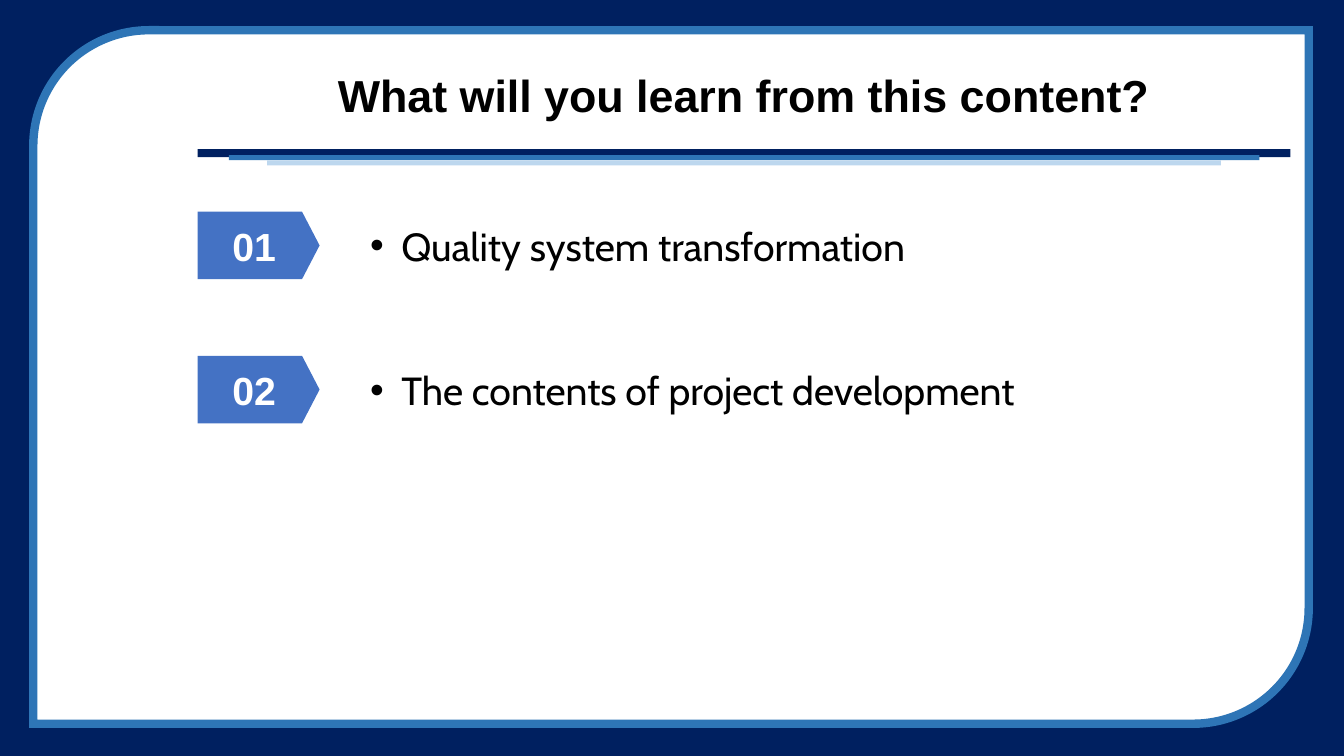
from pptx import Presentation
from pptx.dml.color import RGBColor
from pptx.enum.shapes import MSO_SHAPE
from pptx.enum.text import MSO_ANCHOR, MSO_AUTO_SIZE, PP_ALIGN
from pptx.oxml.ns import qn
from pptx.util import Inches, Pt
from lxml.etree import SubElement

NAVY = RGBColor(0x00, 0x20, 0x60)
BLUE = RGBColor(0x2E, 0x75, 0xB6)
PALE = RGBColor(0xBD, 0xD7, 0xEE)
TAG = RGBColor(0x44, 0x72, 0xC4)
WHITE = RGBColor(0xFF, 0xFF, 0xFF)
BLACK = RGBColor(0x00, 0x00, 0x00)

TITLE = "What will you learn from this content?"
TOPICS = ["Quality system transformation", "The contents of project development"]


def add_block(slide, kind, box, fill):
    """Add a plain filled shape without outline or shadow."""
    shape = slide.shapes.add_shape(kind, *map(Inches, box))
    shape.shadow.inherit = False
    shape.fill.solid()
    shape.fill.fore_color.rgb = fill
    shape.line.fill.background()
    return shape


def place(holder, box):
    """Move a placeholder into the box and in front of the other shapes."""
    holder.left, holder.top, holder.width, holder.height = map(Inches, box)
    holder.element.getparent().append(holder.element)
    holder.text_frame.word_wrap = True
    holder.text_frame.auto_size = MSO_AUTO_SIZE.NONE


def set_text(shape, text, size, face, color, bold, align):
    """Fill a shape with one styled, vertically centred paragraph."""
    frame = shape.text_frame
    frame.text = text
    frame.vertical_anchor = MSO_ANCHOR.MIDDLE
    para = frame.paragraphs[0]
    para.alignment = align
    para.space_before = Pt(0)
    font = para.runs[0].font
    font.size, font.name, font.bold = Pt(size), face, bold
    font.color.rgb = color
    return para


def add_frame(slide, box):
    """Draw the navy backdrop and the white panel inset in it."""
    left, top, width, height = box
    add_block(slide, MSO_SHAPE.RECTANGLE, box, NAVY)
    inner = (left + 0.33, top + 0.3, width - 0.68, height - 0.62)
    panel = add_block(slide, MSO_SHAPE.ROUND_2_DIAG_RECTANGLE, inner, WHITE)
    panel.line.color.rgb = BLUE
    panel.line.width = Pt(6)
    SubElement(panel.line._ln, qn("a:miter"), lim="800000")


def add_head(slide, box):
    """Set the title above three stepped rules."""
    left, top, width, height = box
    rules = [(0, 0.99, 0.08, NAVY), (0.31, 1.05, 0.05, BLUE), (0.69, 1.1, 0.05, PALE)]
    for inset, drop, thick, color in rules:
        rule = (left + inset, top + drop, width - 2 * inset, thick)
        add_block(slide, MSO_SHAPE.RECTANGLE, rule, color)
    title = slide.shapes.title
    place(title, box)
    para = set_text(title, TITLE, 32, "Arial", BLACK, True, PP_ALIGN.CENTER)
    para.line_spacing = 0.9


def add_topic(slide, holder, box, number, text):
    """Draw a numbered tag with its bulleted topic beside it."""
    left, top, width, height = box
    tag = add_block(slide, MSO_SHAPE.PENTAGON, (left, top, 1.21, height), TAG)
    tag.adjustments[0] = 0.26
    set_text(tag, f"{number:02}", 28, "Arial", WHITE, True, PP_ALIGN.CENTER)
    place(holder, (left + 1.61, top + 0.05, width - 1.61, height - 0.1))
    para = set_text(holder, text, 28, "Cabin", BLACK, False, PP_ALIGN.LEFT)
    props = para._p.get_or_add_pPr()
    props.set("marL", str(Inches(0.31)))
    props.set("indent", str(Inches(-0.31)))
    SubElement(props, qn("a:buFont"), typeface="Arial")
    SubElement(props, qn("a:buChar"), char="•")


def main():
    """Build the agenda slide and save it."""
    deck = Presentation()
    deck.slide_width, deck.slide_height = Inches(13.33), Inches(7.5)
    slide = deck.slides.add_slide(deck.slide_layouts.get_by_name("Two Content"))
    holders = [slide.placeholders[1], slide.placeholders[2]]
    add_frame(slide, (0, 0, 13.33, 7.5))
    add_head(slide, (1.96, 0.49, 10.84, 0.97))
    for row, (holder, text) in enumerate(zip(holders, TOPICS)):
        box = (1.96, 2.1 + 1.43 * row, 10.55, 0.67)
        add_topic(slide, holder, box, row + 1, text)
    deck.save("out.pptx")


if __name__ == "__main__":
    main()
